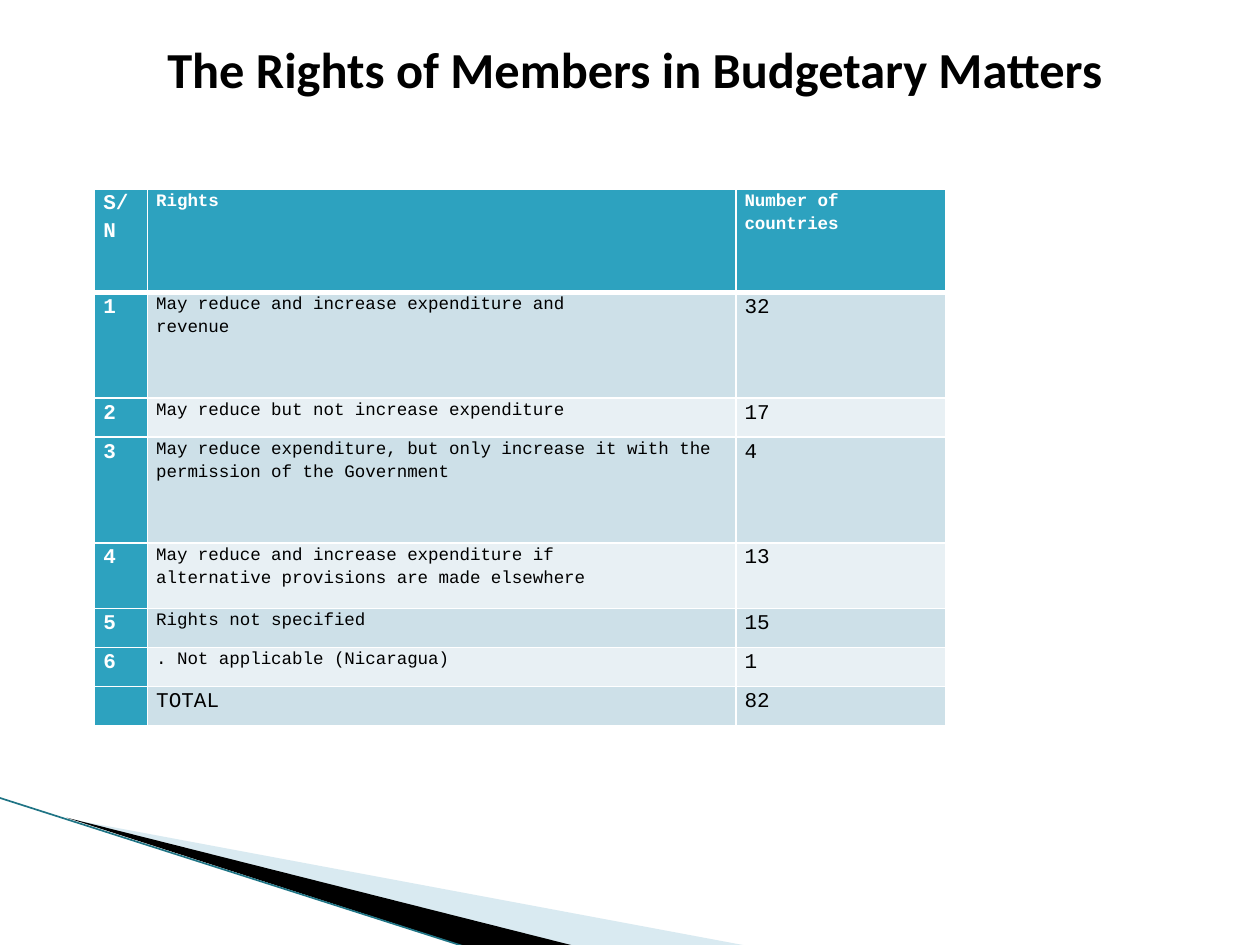
from lxml import etree
from pptx import Presentation
from pptx.dml.color import RGBColor
from pptx.enum.shapes import MSO_CONNECTOR
from pptx.enum.text import MSO_ANCHOR, PP_ALIGN
from pptx.oxml.ns import qn
from pptx.util import Inches, Pt

STRAIGHT = MSO_CONNECTOR.STRAIGHT
TOP = MSO_ANCHOR.TOP
CENTER = PP_ALIGN.CENTER

# Content
TITLE = "The Rights of Members in Budgetary Matters"
HEADER = ("S/N", "Rights", "Number of countries")
RIGHTS = [
    ("1", "May reduce and increase expenditure and\nrevenue", "32"),
    ("2", "May reduce but not increase expenditure", "17"),
    ("3", "May reduce expenditure, but only increase it with the "
          "permission of the Government", "4"),
    ("4", "May reduce and increase expenditure if\n"
          "alternative provisions are made elsewhere", "13"),
    ("5", "Rights not specified", "15"),
    ("6", ". Not applicable (Nicaragua)", "1"),
]
TOTAL = ("", "TOTAL", "82")
ROWS = [HEADER, *RIGHTS, TOTAL]

COLUMN_WIDTHS = (0.42, 4.67, 1.67)
ROW_HEIGHTS = (0.82, 0.84, 0.31, 0.84, 0.52, 0.31, 0.31, 0.31)

# Corner decoration: points, fill colour name, opacity in percent
WEDGES = [
    ([(0.55, 6.5), (5.95, 7.51), (4.56, 7.51)], "pale", 40),
    ([(0.53, 6.49), (4.57, 7.51), (3.72, 7.52)], "black", 100),
]
EDGE = ((-0.01, 6.33), (3.71, 7.52))

THEME = {
    "title_font": "Calibri", "table_font": "Courier New",
    "title_size": 28.8, "large": 12, "small": 10,
    "accent": "2DA2BF", "bands": ("CDE0E8", "E8F0F4"),
    "pale": "A0CBDC", "edge": "1F7485",
    "black": "000000", "white": "FFFFFF",
}


def rgb(name):
    return RGBColor.from_string(THEME.get(name, name))


def style_font(font, family, size, color, bold):
    font.name = family
    font.size = Pt(size)
    font.color.rgb = rgb(color)
    font.bold = bold


def add_wedge(slide, points, color, opacity):
    corners = [(Inches(x), Inches(y)) for x, y in points]
    builder = slide.shapes.build_freeform(*corners[0])
    builder.add_line_segments(corners[1:], close=True)
    shape = builder.convert_to_shape()
    shape.shadow.inherit = False
    shape.fill.solid()
    shape.fill.fore_color.rgb = rgb(color)
    shape.line.fill.background()
    if opacity < 100:
        color_element = shape.fill._xPr.find(qn("a:solidFill"))[0]
        etree.SubElement(color_element, qn("a:alpha"), val=str(opacity * 1000))


def add_edge(slide, start, end):
    line = slide.shapes.add_connector(
        STRAIGHT, *(Inches(value) for value in (*start, *end)))
    line.line.color.rgb = rgb("edge")
    line.line.width = Pt(0.95)
    etree.SubElement(line._element.spPr, qn("a:effectLst"))


def set_borders(cell, widths):
    properties = cell._tc.get_or_add_tcPr()
    for side in ("L", "R", "T", "B"):
        border = etree.SubElement(properties, qn(f"a:ln{side}"),
                                  w=str(Pt(widths.get(side, 1))))
        fill = etree.SubElement(border, qn("a:solidFill"))
        etree.SubElement(fill, qn("a:srgbClr"), val=THEME["white"])


def fill_cell(cell, text, row, column):
    is_header, is_key = row == 0, column == 0
    accented = is_header or is_key
    is_small = column == 1 and text != TOTAL[1] or is_header and not is_key

    cell.margin_left = cell.margin_right = Inches(0.07)
    cell.margin_top = cell.margin_bottom = 0
    set_borders(cell, {0: {"B": 3}, 1: {"T": 3}}.get(row, {}))
    cell.fill.solid()
    cell.fill.fore_color.rgb = rgb(
        "accent" if accented else THEME["bands"][(row - 1) % 2])
    if not text:
        return
    cell.text_frame.text = text
    for paragraph in cell.text_frame.paragraphs:
        paragraph.line_spacing = 1.15
        for run in paragraph.runs:
            style_font(run.font, THEME["table_font"],
                       THEME["small" if is_small else "large"],
                       "white" if accented else "black", accented)


def add_rights_table(slide):
    frame = slide.shapes.add_table(
        len(ROWS), len(HEADER), Inches(0.75), Inches(1.5),
        Inches(sum(COLUMN_WIDTHS)), Inches(sum(ROW_HEIGHTS)))
    table = frame.table
    for column, width in zip(table.columns, COLUMN_WIDTHS):
        column.width = Inches(width)
    for row, height in zip(table.rows, ROW_HEIGHTS):
        row.height = Inches(height)
    for row, values in enumerate(ROWS):
        for column, text in enumerate(values):
            fill_cell(table.cell(row, column), text, row, column)


def add_title(slide):
    box = slide.shapes.add_textbox(
        Inches(0.58), Inches(0.3), Inches(8.92), Inches(0.95))
    frame = box.text_frame
    frame.word_wrap = True
    frame.vertical_anchor = TOP
    frame.margin_top = 0
    frame.text = TITLE
    paragraph = frame.paragraphs[0]
    paragraph.alignment = CENTER
    style_font(paragraph.runs[0].font, THEME["title_font"],
               THEME["title_size"], "black", True)


def main():
    presentation = Presentation()
    presentation.slide_width = Inches(10)
    presentation.slide_height = Inches(7.5)
    slide = presentation.slides.add_slide(presentation.slide_layouts[6])

    # Corner decoration
    for wedge in WEDGES:
        add_wedge(slide, *wedge)
    add_edge(slide, *EDGE)

    # Table and title
    add_rights_table(slide)
    add_title(slide)
    presentation.save("out.pptx")


if __name__ == "__main__":
    main()
